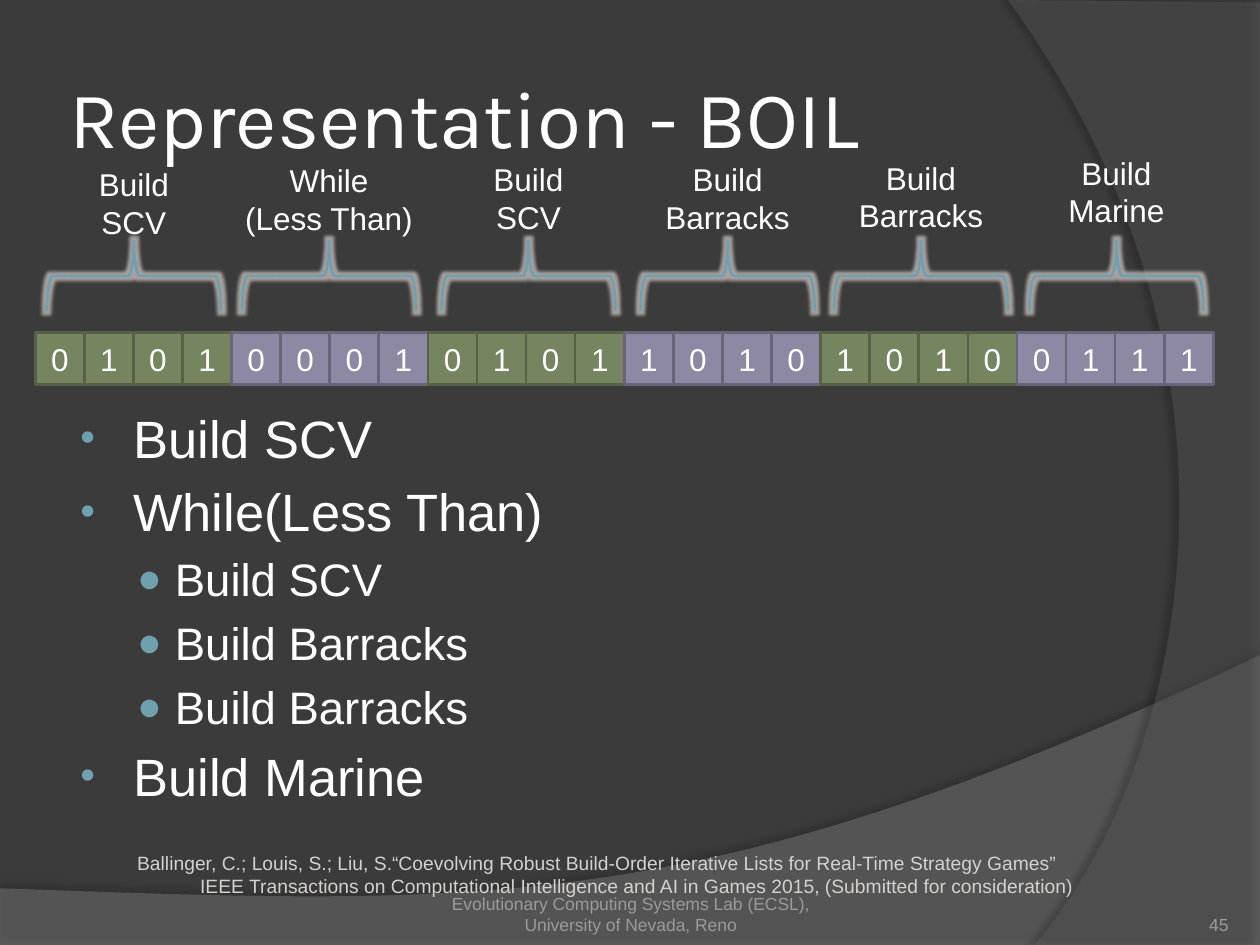
from dataclasses import dataclass

import pptx
import pptx.dml.color
import pptx.enum.shapes
import pptx.enum.text
import pptx.oxml
import pptx.oxml.ns
import pptx.util

Pt = pptx.util.Pt
ALIGN = pptx.enum.text.PP_ALIGN
ANCHOR = pptx.enum.text.MSO_ANCHOR
SHAPE = pptx.enum.shapes.MSO_SHAPE

COLORS = {
    "background": "3B3B3B", "wave": "7F7F7F", "arc": "5E5E5E", "shadow": "000000",
    "text": "FFFFFF", "footer": "9D9B9A", "citation": "D4D2D0",
    "accent": "6EA0B0", "glow": "D6CCC8",
    "green": "748560", "green edge": "566247",
    "violet": "8D89A4", "violet edge": "686579",
}
BIT_LEFT, BIT_TOP, BIT_WIDTH, BIT_HEIGHT = 20.16, 190.08, 28.05, 29.52
BRACE_TOP, BRACE_WIDTH, BRACE_HEIGHT = 137.52, 99.36, 40.32
LABEL_HEIGHT = 51.12


@dataclass
class Gene:
    bits: str
    label: str
    center: float
    label_top: float
    label_width: float


@dataclass
class Line:
    text: str
    size: float
    bullet: str = ""
    bullet_percent: int = 100
    margin: float = 0
    indent: float = 0


@dataclass
class Band:
    corners: list
    curve: list
    color: str
    opacity: int
    shadow_opacity: int
    shadow_distance: float
    shadow_angle: int


GENES = [
    Gene("0101", "Build SCV", 76.5, 90.72, 84.24),
    Gene("0001", "While\v(Less Than)", 188, 88.56, 112.32),
    Gene("0101", "Build SCV", 302, 87.84, 84.24),
    Gene("1010", "Build Barracks", 415.8, 87.84, 97.92),
    Gene("1010", "Build Barracks", 526.3, 87.12, 97.92),
    Gene("0111", "Build Marine", 638, 84.24, 97.92),
]
BANDS = [
    Band([(0, 540), (720, 540)],
         [(720, 374.4), (402.48, 524.88), (281.52, 517.68), (0, 507.6)],
         "wave", 45, 35, 3.5, 270),
    Band([(720, 1.44), (720, 540)],
         [(591.12, 540), (673.2, 445.68), (732.96, 216), (576, 0)],
         "arc", 40, 45, 4, 180),
]
OUTER = dict(size=30, bullet="•", bullet_percent=80, margin=33.12, indent=-30.24)
INNER = dict(size=26, bullet="●", bullet_percent=90, margin=56.88, indent=-21.6)
STEPS = [
    Line("Build SCV", **OUTER),
    Line("While(Less Than)", **OUTER),
    Line("Build SCV", **INNER),
    Line("Build Barracks", **INNER),
    Line("Build Barracks", **INNER),
    Line("Build Marine", **OUTER),
]
CITATION = [
    Line("Ballinger, C.; Louis, S.; Liu, S.“Coevolving Robust Build-Order Iterative Lists "
         "for Real-Time Strategy Games”", 11),
    Line("\tIEEE Transactions on Computational Intelligence and AI in Games 2015, "
         "(Submitted for consideration)", 11),
]


def rgb(name: str):
    return pptx.dml.color.RGBColor.from_string(COLORS[name])


def set_values(target, values: dict) -> None:
    for name, value in values.items():
        setattr(target, name, value)


def add_xml(parent, xml: str) -> None:
    namespace = pptx.oxml.ns.nsdecls("a")
    parent.append(pptx.oxml.parse_xml(xml.replace(" ", f" {namespace} ", 1)))


def color_xml(name: str, opacity: int) -> str:
    return f'<a:srgbClr val="{COLORS[name]}"><a:alpha val="{opacity * 1000}"/></a:srgbClr>'


def set_effect(shape, xml: str) -> None:
    shape.shadow.inherit = False
    add_xml(shape._element.spPr.find(pptx.oxml.ns.qn("a:effectLst")), xml)


def add_bullet(para, line: Line) -> None:
    properties = para._p.get_or_add_pPr()
    properties.set("marL", str(Pt(line.margin)))
    properties.set("indent", str(Pt(line.indent)))
    add_xml(properties, f'<a:buClr ><a:srgbClr val="{COLORS["accent"]}"/></a:buClr>')
    add_xml(properties, f'<a:buSzPct val="{line.bullet_percent * 1000}"/>')
    add_xml(properties, '<a:buFont typeface="Arial"/>')
    add_xml(properties, f'<a:buChar char="{line.bullet}"/>')


def write_lines(frame, lines: list, color="text", align=ALIGN.LEFT, font="Arial", gap=0.0) -> None:
    """Fill a text frame; gap is the space before a paragraph as a share of its size."""
    for index, line in enumerate(lines):
        para = frame.add_paragraph() if index else frame.paragraphs[0]
        para.text = line.text
        para.alignment = align
        if font == "Arial":
            para.line_spacing = Pt(round(line.size * 1.2, 2))
        if index and gap:
            para.space_before = Pt(round(line.size * gap, 2))
        if line.bullet:
            add_bullet(para, line)
        set_values(para.font, {"size": Pt(line.size), "name": font})
        para.font.color.rgb = rgb(color)


def add_text(slide, left, top, width, height, lines: list, anchor=ANCHOR.TOP,
             insets=(7.2, 3.6, 7.2, 3.6), **style):
    box = slide.shapes.add_textbox(Pt(left), Pt(top), Pt(width), Pt(height))
    sides = ("margin_left", "margin_top", "margin_right", "margin_bottom")
    margins = dict(zip(sides, map(Pt, insets)))
    set_values(box.text_frame, {"word_wrap": True, "vertical_anchor": anchor, **margins})
    write_lines(box.text_frame, lines, **style)


def bezier_points(curve: list, steps: int = 60) -> list:
    points = []
    for step in range(steps + 1):
        t = step / steps
        weights = ((1 - t) ** 3, 3 * t * (1 - t) ** 2, 3 * t * t * (1 - t), t ** 3)
        points.append(tuple(sum(w * p[axis] for w, p in zip(weights, curve)) for axis in (0, 1)))
    return points


def add_band(slide, band: Band) -> None:
    points = [(Pt(x), Pt(y)) for x, y in bezier_points(band.curve) + band.corners]
    builder = slide.shapes.build_freeform(*points[0])
    builder.add_line_segments(points[1:], close=True)
    shape = builder.convert_to_shape()
    shape.fill.solid()
    shape.fill.fore_color.rgb = rgb(band.color)
    fill_color = shape._element.spPr.find(".//" + pptx.oxml.ns.qn("a:srgbClr"))
    add_xml(fill_color, f'<a:alpha val="{band.opacity * 1000}"/>')
    shape.line.fill.background()
    set_effect(shape, f'<a:outerShdw blurRad="{Pt(4)}" dist="{Pt(band.shadow_distance)}" '
                      f'dir="{band.shadow_angle * 60000}" algn="ctr" rotWithShape="0">'
                      f'{color_xml("shadow", band.shadow_opacity)}</a:outerShdw>')


def add_bit(slide, position: int, bit: str, color: str) -> None:
    cell = slide.shapes.add_shape(
        SHAPE.RECTANGLE, Pt(BIT_LEFT + position * BIT_WIDTH), Pt(BIT_TOP),
        Pt(BIT_WIDTH), Pt(BIT_HEIGHT))
    cell.shadow.inherit = False
    cell.fill.solid()
    cell.fill.fore_color.rgb = rgb(color)
    cell.line.color.rgb = rgb(color + " edge")
    cell.line.width = Pt(1.5)
    cell.text_frame.vertical_anchor = ANCHOR.MIDDLE
    write_lines(cell.text_frame, [Line(bit, 18)], align=ALIGN.CENTER)


def add_brace(slide, center: float) -> None:
    """Add a left brace turned so that it points up at its label."""
    middle = BRACE_TOP + BRACE_HEIGHT / 2
    brace = slide.shapes.add_shape(
        SHAPE.LEFT_BRACE, Pt(center - BRACE_HEIGHT / 2), Pt(middle - BRACE_WIDTH / 2),
        Pt(BRACE_HEIGHT), Pt(BRACE_WIDTH))
    brace.rotation = 90
    brace.fill.background()
    set_values(brace.line, {"width": Pt(1.5)})
    brace.line.color.rgb = rgb("accent")
    set_effect(brace, f'<a:glow rad="{Pt(4)}">{color_xml("glow", 70)}</a:glow>')


def add_gene(slide, index: int, gene: Gene) -> None:
    color = ("green", "violet")[index % 2]
    for offset, bit in enumerate(gene.bits):
        add_bit(slide, index * len(gene.bits) + offset, bit, color)
    add_brace(slide, gene.center)
    add_text(slide, gene.center - gene.label_width / 2, gene.label_top, gene.label_width,
             LABEL_HEIGHT, [Line(gene.label, 18)], align=ALIGN.CENTER)


def main() -> None:
    deck = pptx.Presentation()
    set_values(deck, {"slide_width": Pt(720), "slide_height": Pt(540)})
    slide = deck.slides.add_slide(deck.slide_layouts[6])
    slide.background.fill.solid()
    slide.background.fill.fore_color.rgb = rgb("background")
    for band in BANDS:
        add_band(slide, band)
    add_text(slide, 36, 21.6, 588.24, 90, [Line("Representation - BOIL", 46)],
             anchor=ANCHOR.MIDDLE, insets=(3.6,) * 4, font="Karla")
    add_text(slide, 246.24, 505.44, 228.24, 28.8,
             [Line("Evolutionary Computing Systems Lab (ECSL), University of Nevada, Reno", 10)],
             anchor=ANCHOR.BOTTOM, insets=(0, 3.6, 0, 0), color="footer", align=ALIGN.CENTER)
    add_text(slide, 642.24, 505.44, 59.76, 28.8, [Line("45", 10)],
             anchor=ANCHOR.BOTTOM, insets=(0,) * 4, color="footer", align=ALIGN.RIGHT)
    add_text(slide, 36, 228.24, 588.24, 254.16, STEPS, gap=0.2)
    for index, gene in enumerate(GENES):
        add_gene(slide, index, gene)
    add_text(slide, 71.28, 480.24, 617.76, 36, CITATION, anchor=ANCHOR.BOTTOM, color="citation")
    deck.save("out.pptx")


if __name__ == "__main__":
    main()
